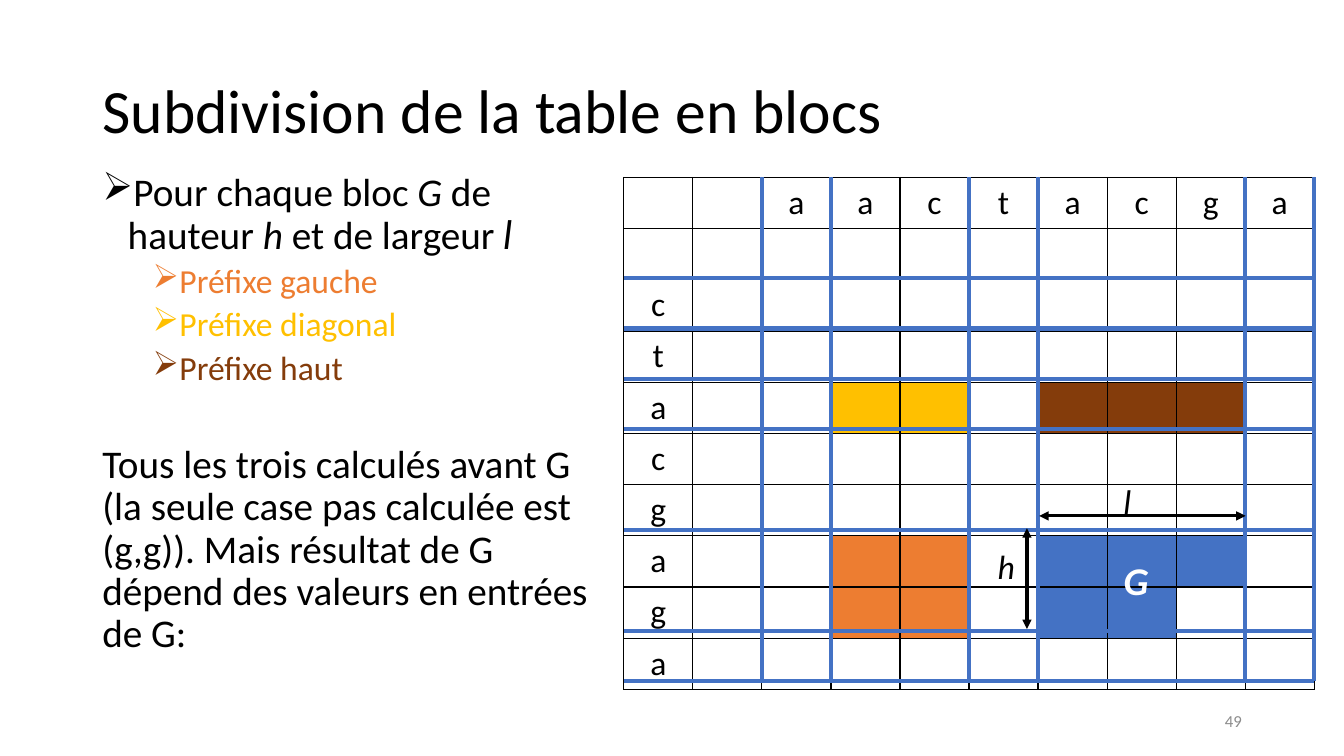
from dataclasses import dataclass

from lxml import etree
from pptx import Presentation
from pptx.dml.color import RGBColor
from pptx.enum.shapes import MSO_CONNECTOR
from pptx.enum.text import MSO_ANCHOR, MSO_AUTO_SIZE, PP_ALIGN
from pptx.oxml.ns import qn
from pptx.util import Cm, Pt

STRAIGHT = MSO_CONNECTOR.STRAIGHT
MIDDLE, TOP = MSO_ANCHOR.MIDDLE, MSO_ANCHOR.TOP
LEFT, CENTER, RIGHT = PP_ALIGN.LEFT, PP_ALIGN.CENTER, PP_ALIGN.RIGHT
NO_FIT, GROW = MSO_AUTO_SIZE.NONE, MSO_AUTO_SIZE.SHAPE_TO_FIT_TEXT


@dataclass(frozen=True)
class Theme:
    font: str = "Calibri"
    letter_font: str = "Lato"
    black: str = "000000"
    white: str = "FFFFFF"
    grey: str = "8C8C8C"
    blue: str = "4472C4"
    orange: str = "ED7D31"
    yellow: str = "FFC000"
    brown: str = "843C0B"
    title_size: int = 44
    body_size: int = 28
    small_size: int = 24
    number_size: int = 12
    block_line: float = 3
    arrow_line: float = 2.25
    cell_line: float = 1


THEME = Theme()

TITLE = "Subdivision de la table en blocs"
PAGE_NUMBER = "49"
BLOCK_INTRO = [
    ("Pour chaque bloc ", False),
    ("G", True),
    (" de hauteur ", False),
    ("h", True),
    (" et de largeur ", False),
    ("l", True),
]
PREFIXES = [
    ("Préfixe gauche", THEME.orange),
    ("Préfixe diagonal", THEME.yellow),
    ("Préfixe haut", THEME.brown),
]
CONCLUSION = (
    "Tous les trois calculés avant G (la seule case pas calculée est (g,g)). "
    "Mais résultat de G dépend des valeurs en entrées de G:"
)
TOP_SEQUENCE = "  aactacga"
SIDE_SEQUENCE = "  ctacgaga"
COLOURED_CELLS = [
    ((4,), (3, 4), THEME.yellow),
    ((4,), (6, 7, 8), THEME.brown),
    ((7, 8), (3, 4), THEME.orange),
    ((7, 8), (6, 7), THEME.blue),
    ((7,), (8,), THEME.blue),
    ((8,), (8,), THEME.white),
]
BLOCK_COLUMNS = (2, 3, 5, 6, 9, 10)
BLOCK_ROWS = (2, 3, 4, 5, 7, 9, 10)
LABELS = [
    ("G", 28.07, 13.89, 1.14, 1.45, THEME.body_size, THEME.font, THEME.white, True),
    ("h", 24.89, 13.64, 0.97, 1.27, THEME.small_size, THEME.font, THEME.black, False),
    ("l", 28.07, 12.01, 0.71, 1.27, THEME.small_size, THEME.letter_font, THEME.black, False),
]

GRID_LEFT, GRID_TOP = 15.72, 4.47
COLUMN_WIDTH, ROW_HEIGHT, BLOCK_PITCH = 1.74, 1.29, 1.27
GRID_COUNT = 10


def style(run, size, colour, font=THEME.font, italic=False, bold=False):
    run.font.name = font
    run.font.size = Pt(size)
    run.font.color.rgb = RGBColor.from_string(colour)
    run.font.italic = italic
    run.font.bold = bold


def add_box(slide, left, top, width, height, wrap=True, anchor=TOP):
    frame = slide.shapes.add_textbox(Cm(left), Cm(top), Cm(width), Cm(height)).text_frame
    frame.word_wrap = wrap
    frame.vertical_anchor = anchor
    frame.auto_size = NO_FIT if wrap else GROW
    return frame


def space(paragraph, before=0):
    paragraph.line_spacing = 0.9
    paragraph.space_before = Pt(before)


def add_bullet(paragraph, margin):
    properties = paragraph._p.get_or_add_pPr()
    properties.set("marL", str(Cm(margin)))
    properties.set("indent", str(Cm(-0.64)))
    etree.SubElement(properties, qn("a:buChar")).set("char", "➢")


def add_title(slide):
    title = slide.shapes.title
    title.left, title.top, title.width, title.height = Cm(2.33), Cm(1.01), Cm(29.21), Cm(3.68)
    frame = title.text_frame
    frame.text = TITLE
    frame.word_wrap = True
    frame.auto_size = NO_FIT
    frame.vertical_anchor = MIDDLE
    heading = frame.paragraphs[0]
    heading.alignment = LEFT
    space(heading)
    style(heading.runs[0], THEME.title_size, THEME.black)


def add_explanation(slide):
    frame = add_box(slide, 2.33, 4.23, 12.75, 13.21)
    intro = frame.paragraphs[0]
    add_bullet(intro, 0.64)
    space(intro)
    for words, italic in BLOCK_INTRO:
        run = intro.add_run()
        run.text = words
        font = THEME.letter_font if words == "l" else THEME.font
        style(run, THEME.body_size, THEME.black, font, italic)
    for words, colour in PREFIXES:
        prefix = frame.add_paragraph()
        prefix.text = words
        prefix.level = 1
        add_bullet(prefix, 1.91)
        space(prefix, 5)
        style(prefix.runs[0], THEME.small_size, colour)
    conclusion = frame.add_paragraph()
    conclusion.text = CONCLUSION
    space(conclusion, 41)
    style(conclusion.runs[0], THEME.body_size, THEME.black)


def add_cell_borders(cell):
    properties = cell._tc.get_or_add_tcPr()
    for side in ("a:lnL", "a:lnR", "a:lnT", "a:lnB"):
        border = etree.SubElement(properties, qn(side), w=str(Pt(THEME.cell_line)))
        fill = etree.SubElement(border, qn("a:solidFill"))
        etree.SubElement(fill, qn("a:srgbClr"), val=THEME.black)


def add_alignment_table(slide):
    colours = {(r, c): colour for rows, columns, colour in COLOURED_CELLS for r in rows for c in columns}
    table = slide.shapes.add_table(
        GRID_COUNT, GRID_COUNT, Cm(GRID_LEFT), Cm(GRID_TOP),
        Cm(GRID_COUNT * COLUMN_WIDTH), Cm(GRID_COUNT * ROW_HEIGHT),
    ).table
    table.first_row = table.horz_banding = False
    for column in table.columns:
        column.width = Cm(COLUMN_WIDTH)
    for r, row in enumerate(table.rows):
        row.height = Cm(ROW_HEIGHT)
        for c, cell in enumerate(row.cells):
            add_cell_borders(cell)
            if (r, c) in colours:
                cell.fill.solid()
                cell.fill.fore_color.rgb = RGBColor.from_string(colours[r, c])
            else:
                cell.fill.background()
            letter = TOP_SEQUENCE[c] if r == 0 else SIDE_SEQUENCE[r] if c == 0 else " "
            if letter.strip():
                cell.text_frame.text = letter
                cell.text_frame.paragraphs[0].alignment = CENTER
                style(cell.text_frame.paragraphs[0].runs[0], THEME.small_size, THEME.black)


def add_line(slide, x1, y1, x2, y2, colour, weight, arrows=False):
    line = slide.shapes.add_connector(STRAIGHT, Cm(x1), Cm(y1), Cm(x2), Cm(y2))
    line.line.color.rgb = RGBColor.from_string(colour)
    line.line.width = Pt(weight)
    if arrows:
        for end in ("a:headEnd", "a:tailEnd"):
            etree.SubElement(line.line._get_or_add_ln(), qn(end), type="triangle")
    etree.SubElement(line._element.spPr, qn("a:effectLst"))


def add_blocks(slide):
    right = GRID_LEFT + GRID_COUNT * COLUMN_WIDTH
    bottom = GRID_TOP + GRID_COUNT * BLOCK_PITCH
    for edge in BLOCK_COLUMNS:
        x = GRID_LEFT + edge * COLUMN_WIDTH
        add_line(slide, x, GRID_TOP, x, bottom, THEME.blue, THEME.block_line)
    for edge in BLOCK_ROWS:
        y = GRID_TOP + edge * BLOCK_PITCH
        add_line(slide, GRID_LEFT, y, right, y, THEME.blue, THEME.block_line)
    for ends in ((26.19, 13, 31.39, 13), (25.88, 13.31, 25.88, 15.85)):
        add_line(slide, *ends, THEME.black, THEME.arrow_line, arrows=True)
    for letter, left, top, width, height, size, font, colour, bold in LABELS:
        frame = add_box(slide, left, top, width, height, wrap=False)
        frame.text = letter
        style(frame.paragraphs[0].runs[0], size, colour, font, True, bold)


def main():
    """Build the slide on dividing an alignment table into blocks."""
    deck = Presentation()
    deck.slide_width, deck.slide_height = Cm(33.87), Cm(19.05)
    slide = deck.slides.add_slide(deck.slide_layouts[5])
    add_title(slide)
    add_explanation(slide)
    number = add_box(slide, 23.93, 17.65, 7.62, 1.01, anchor=MIDDLE)
    number.text = PAGE_NUMBER
    number.paragraphs[0].alignment = RIGHT
    style(number.paragraphs[0].runs[0], THEME.number_size, THEME.grey)
    add_alignment_table(slide)
    add_blocks(slide)
    deck.save("out.pptx")


if __name__ == "__main__":
    main()
